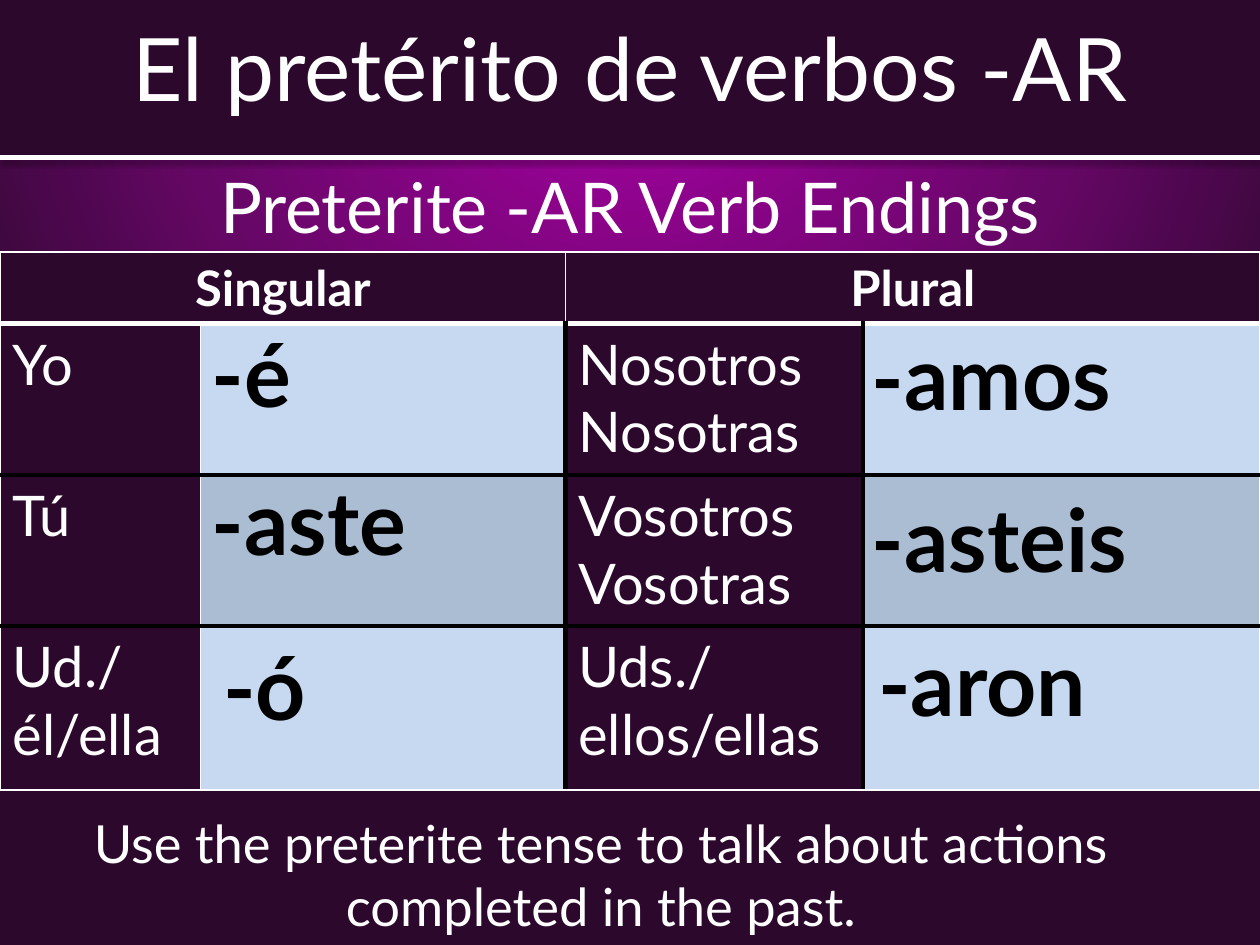
from lxml import etree
from pptx import Presentation
from pptx import util as u
from pptx.dml.color import RGBColor
from pptx.enum import shapes, text
from pptx.oxml import ns, parse_xml

WHITE = RGBColor(0xFF, 0xFF, 0xFF)
BLACK = RGBColor(0, 0, 0)
PLUM = RGBColor(0x2B, 0x08, 0x2C)
GRAPE = RGBColor(0x65, 0x07, 0x65)
PINK = RGBColor(0xAE, 0x00, 0xAB)
PALE = RGBColor(0xC6, 0xD9, 0xF1)
STEEL = RGBColor(0xAB, 0xBD, 0xD2)

FONT = "Lato"
WIDE, HIGH = 10, 7.5
BAND = HIGH / 6
TOP = 2
COLS = [1.59, 2.9, 2.36, 3.15]
ROWS = [0.57, 1.2, 1.2, 1.3]
THIN, THICK, DARK = (WHITE, 1), (WHITE, 3), (BLACK, 3)
ACROSS = [THIN, THICK, DARK, DARK, THIN]
DOWN = [THIN, THIN, DARK, DARK, THIN]
WORDS = [
    ["Singular", "", "Plural", ""],
    ["Yo", "", "Nosotros\nNosotras", ""],
    ["Tú", "", "Vosotros\nVosotras", ""],
    ["Ud./él/ella", "", "Uds./ellos/ellas", ""],
]
ENDINGS = [
    ("-é", 1.58, 2.5, 2.81),
    ("-aste", 1.58, 3.67, 2.97),
    ("-ó", 1.67, 4.98, 2.73),
    ("-amos", 6.82, 2.52, 3.31),
    ("-asteis", 6.82, 3.81, 2.52),
    ("-aron", 6.87, 4.95, 3.07),
]


def box(*sides):
    return [u.Inches(side) for side in sides]


def paint(slide):
    stops = "".join(
        f'<a:gs pos="{pos * 1000}"><a:srgbClr val="{color}"/></a:gs>'
        for pos, color in [(0, PINK), (59, GRAPE), (100, PLUM)])
    fill = slide.background.fill
    fill.solid()
    props = slide.background._cSld.find(".//" + ns.qn("p:bgPr"))
    grad = parse_xml(
        f'<a:gradFill {ns.nsdecls("a")} rotWithShape="1"><a:gsLst>{stops}</a:gsLst>'
        '<a:path path="circle"><a:fillToRect l="50000" t="-80000" '
        'r="50000" b="180000"/></a:path></a:gradFill>')
    props.replace(props.find(ns.qn("a:solidFill")), grad)


def write(frame, words, size, color=WHITE, bold=False, align=None):
    frame.text = words
    for para in frame.paragraphs:
        para.alignment = align
        font = para.font
        font.name, font.size, font.bold = FONT, u.Pt(size), bold
        font.color.rgb = color


def label(slide, words, size, place):
    frame = slide.shapes.add_textbox(*box(*place)).text_frame
    frame.word_wrap = True
    write(frame, words, size, align=text.PP_ALIGN.CENTER)
    return frame


def header(slide):
    band = slide.shapes.add_shape(
        shapes.MSO_SHAPE.RECTANGLE, *box(0, 0, WIDE, BAND))
    band.shadow.inherit = False
    band.fill.solid()
    band.fill.fore_color.rgb = PLUM
    band.line.fill.background()


def rule(slide):
    line = slide.shapes.add_connector(
        shapes.MSO_CONNECTOR.STRAIGHT, *box(0, BAND, WIDE, BAND))
    line.line.color.rgb = WHITE
    line.line.width = u.Pt(3)
    line._element.spPr.append(parse_xml(
        f'<a:effectLst {ns.nsdecls("a")}><a:outerShdw blurRad="{u.Pt(3.1)}" '
        f'dist="{u.Pt(1.6)}" dir="5400000" rotWithShape="0"><a:srgbClr val="{BLACK}">'
        '<a:alpha val="38000"/></a:srgbClr></a:outerShdw></a:effectLst>'))


def edge(cell, *sides):
    props = cell._tc.get_or_add_tcPr()
    for name, side in zip("LRTB", sides):
        line = etree.SubElement(props, ns.qn(f"a:ln{name}"))
        if side is None:
            etree.SubElement(line, ns.qn("a:noFill"))
            continue
        color, width = side
        line.set("w", str(u.Pt(width)))
        fill = etree.SubElement(line, ns.qn("a:solidFill"))
        etree.SubElement(fill, ns.qn("a:srgbClr"), val=str(color))


def table(slide, left, top, cols, rows):
    place = box(left, top, sum(cols), sum(rows))
    grid = slide.shapes.add_table(len(rows), len(cols), *place).table
    grid.first_row = grid.horz_banding = False
    for col, width in zip(grid.columns, cols):
        col.width = u.Inches(width)
    for row, height in zip(grid.rows, rows):
        row.height = u.Inches(height)
    return grid


def chart(slide):
    grid = table(slide, 0, TOP, COLS, ROWS)
    for r, row in enumerate(WORDS):
        sides = DOWN if r else [THIN] * 5
        for c, words in enumerate(row):
            cell = grid.cell(r, c)
            edge(cell, sides[c], sides[c + 1], ACROSS[r], ACROSS[r + 1])
            cell.fill.solid()
            blue = STEEL if r == 2 else PALE
            cell.fill.fore_color.rgb = blue if r and c % 2 else PLUM
            if words and r:
                write(cell.text_frame, words, 32)
            elif words:
                write(cell.text_frame, words, 28, bold=True,
                      align=text.PP_ALIGN.CENTER)
    for c in (0, 2):
        grid.cell(0, c).merge(grid.cell(0, c + 1))


def ending(slide, words, left, top, width):
    cell = table(slide, left, top, [width], [0.93]).cell(0, 0)
    edge(cell, None, None, None, None)
    cell.fill.background()
    write(cell.text_frame, words, 50, BLACK, True)


def main():
    deck = Presentation()
    deck.slide_width, deck.slide_height = box(WIDE, HIGH)
    slide = deck.slides.add_slide(deck.slide_layouts[6])
    paint(slide)
    header(slide)
    label(slide, "Preterite -AR Verb Endings", 40, (0, BAND, WIDE, TOP - BAND))
    rule(slide)
    title = label(slide, "El pretérito de verbos -AR", 50, (0, 0, WIDE, 1.06))
    title.vertical_anchor = text.MSO_ANCHOR.MIDDLE
    chart(slide)
    for item in ENDINGS:
        ending(slide, *item)
    label(slide, "Use the preterite tense to talk about actions completed in the past.",
          30, (0.59, 6.39, 8.36, 1.11))
    deck.save("out.pptx")


if __name__ == "__main__":
    main()
